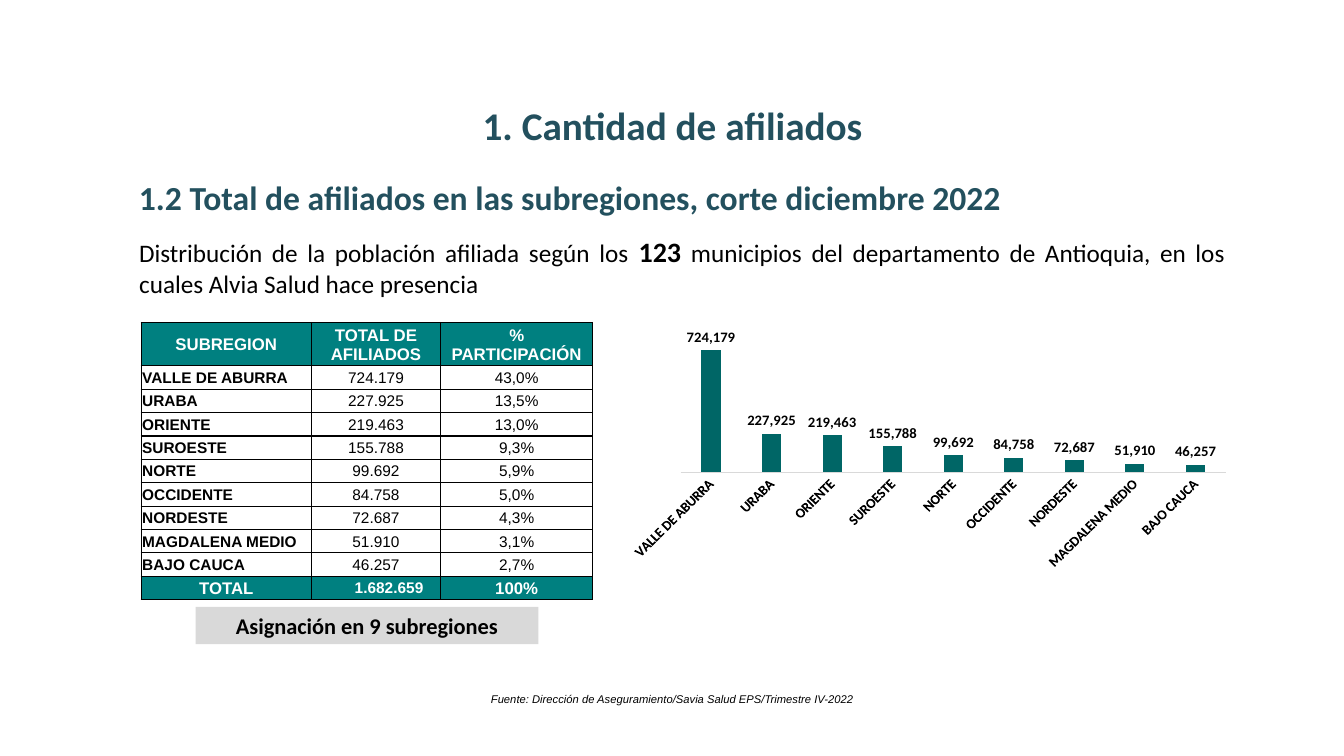
from lxml import etree
from pptx import Presentation
from pptx import util as u
from pptx.chart.data import CategoryChartData
from pptx.dml.color import RGBColor
from pptx.enum import chart as ch, shapes, text
from pptx.oxml.ns import qn

# Content
TITLE = "1. Cantidad de afiliados"
SUBTITLE = "1.2 Total de afiliados en las subregiones, corte diciembre 2022"
INTRO = ("Distribución de la población afiliada según los ", "123",
         " municipios del departamento de Antioquia, en los cuales Alvia Salud hace presencia")
HEADER = ("SUBREGION", "TOTAL DE AFILIADOS", "%\nPARTICIPACIÓN")
SUBREGIONS = [
    ("VALLE DE ABURRA", 724179, "43,0%"),
    ("URABA", 227925, "13,5%"),
    ("ORIENTE", 219463, "13,0%"),
    ("SUROESTE", 155788, "9,3%"),
    ("NORTE", 99692, "5,9%"),
    ("OCCIDENTE", 84758, "5,0%"),
    ("NORDESTE", 72687, "4,3%"),
    ("MAGDALENA MEDIO", 51910, "3,1%"),
    ("BAJO CAUCA", 46257, "2,7%"),
]
TOTAL = ("TOTAL", 1682659, "100%")
BANNER = "Asignación en 9 subregiones"
SOURCE = "Fuente: Dirección de Aseguramiento/Savia Salud EPS/Trimestre IV-2022"


class Theme:
    heading, black, white = "23505E", "000000", "FFFFFF"
    teal, bar, grey = "008080", "006666", "D9D9D9"
    body_font, table_font = "Calibri", "Arial"
    title, subtitle, body, strong, banner = 28, 24, 18, 20, 16
    head, cell, axis, label, source = 12, 11, 10, 10.5, 8


LEFT, CENTER, RIGHT, JUSTIFY = (text.PP_ALIGN.LEFT, text.PP_ALIGN.CENTER,
                                text.PP_ALIGN.RIGHT, text.PP_ALIGN.JUSTIFY)


def rgb(value):
    return RGBColor.from_string(value)


def style(font, size, color=Theme.black, name=Theme.body_font, bold=False, italic=False):
    font.size, font.name, font.bold, font.italic = u.Pt(size), name, bold, italic
    font.color.rgb = rgb(color)


def write(tf, content, align=LEFT, **fmt):
    """Fill a text frame, one paragraph per line of content."""
    tf.word_wrap = True
    for i, line in enumerate(content.split("\n")):
        p = tf.paragraphs[0] if i == 0 else tf.add_paragraph()
        p.alignment = align
        r = p.add_run()
        r.text = line
        style(r.font, **fmt)


def place(sp, left, top, width, height):
    sp.left, sp.top, sp.width, sp.height = map(u.Inches, (left, top, width, height))


def fill_cell(cell, content, fill=None, margin_right=0.01, **fmt):
    cell.margin_left = cell.margin_top = u.Inches(0.01)
    cell.margin_right, cell.margin_bottom = u.Inches(margin_right), 0
    cell.vertical_anchor = text.MSO_ANCHOR.MIDDLE
    write(cell.text_frame, content, name=Theme.table_font, **fmt)
    tc_pr = cell._tc.get_or_add_tcPr()
    for side in ("a:lnL", "a:lnR", "a:lnT", "a:lnB"):
        ln = etree.SubElement(tc_pr, qn(side), w=str(u.Pt(1)))
        solid = etree.SubElement(ln, qn("a:solidFill"))
        etree.SubElement(solid, qn("a:srgbClr"), val=Theme.black)
    if fill:
        cell.fill.solid()
        cell.fill.fore_color.rgb = rgb(fill)
    else:
        cell.fill.background()


def add_table(s):
    rows = [HEADER, *SUBREGIONS, TOTAL]
    widths, height, head_height = (1.69, 1.28, 1.51), 2.75, 0.43
    frame = s.shapes.add_table(len(rows), len(widths), u.Inches(1.4), u.Inches(3.2),
                               u.Inches(sum(widths)), u.Inches(height))
    table = frame.table
    table.horz_banding = False
    for col, width in zip(table.columns, widths):
        col.width = u.Inches(width)
    last = len(rows) - 1
    for i, row in enumerate(rows):
        table.rows[i].height = u.Inches(head_height if i == 0 else (height - head_height) / last)
        for j, value in enumerate(row):
            content = f"{value:,}".replace(",", ".") if isinstance(value, int) else value
            fmt = dict(align=CENTER, size=Theme.cell)
            if i in (0, last):
                fmt.update(size=Theme.head, color=Theme.white, bold=True, fill=Theme.teal)
                if isinstance(value, int):
                    fmt.update(align=RIGHT, margin_right=0.17, size=Theme.cell)
            elif j == 0:
                fmt.update(align=LEFT, bold=True)
            fill_cell(table.cell(i, j), content, **fmt)


def add_chart(s):
    data = CategoryChartData(number_format="#,##0")
    data.categories = [name for name, _, _ in SUBREGIONS]
    data.add_series("Afiliados", [count for _, count, _ in SUBREGIONS])
    chart = s.shapes.add_chart(ch.XL_CHART_TYPE.COLUMN_CLUSTERED, u.Inches(6.14), u.Inches(3.26),
                               u.Inches(6.14), u.Inches(2.44), data).chart
    chart.has_legend = chart.has_title = False
    style(chart.font, Theme.axis)

    # Axes
    val, cat = chart.value_axis, chart.category_axis
    val.visible = val.has_major_gridlines = False
    val.minimum_scale, val.maximum_scale = 0, 800000
    cat.major_tick_mark = ch.XL_TICK_MARK.NONE
    cat.format.line.color.rgb, cat.format.line.width = rgb(Theme.grey), u.Pt(0.75)
    style(cat.tick_labels.font, Theme.axis, bold=True)
    cat._element.find(qn("c:txPr")).find(qn("a:bodyPr")).set("rot", "-2700000")

    # Columns and their labels
    plot = chart.plots[0]
    plot.vary_by_categories, plot.gap_width, plot.overlap = False, 219, -27
    bars = plot.series[0]
    bars.format.fill.solid()
    bars.format.fill.fore_color.rgb = rgb(Theme.bar)
    labels = bars.data_labels
    labels.show_value, labels.position = True, ch.XL_LABEL_POSITION.OUTSIDE_END
    labels.number_format, labels.number_format_is_linked = "#,##0", False
    style(labels.font, Theme.label, bold=True)


def main():
    prs = Presentation()
    prs.slide_width, prs.slide_height = u.Inches(13.33), u.Inches(7.5)
    s = prs.slides.add_slide(prs.slide_layouts[1])

    # Title and subtitle
    title, body = s.placeholders
    place(title, 2.66, 0.95, 8.02, 0.57)
    write(title.text_frame, TITLE, CENTER, size=Theme.title, color=Theme.heading, bold=True)
    sp = s.shapes.add_textbox(0, 0, 0, 0)
    place(sp, 1.28, 1.71, 9.71, 0.5)
    write(sp.text_frame, SUBTITLE, size=Theme.subtitle, color=Theme.heading, bold=True)

    # Introduction
    place(body, 1.28, 2.28, 10.97, 0.74)
    p = body.text_frame.paragraphs[0]
    p_pr = p._p.get_or_add_pPr()
    p_pr.set("marL", "0")
    p_pr.set("indent", "0")
    etree.SubElement(p_pr, qn("a:buNone"))
    p.alignment, p.space_before = JUSTIFY, u.Pt(0)
    for part in INTRO:
        r = p.add_run()
        r.text = part
        strong = part.isdigit()
        style(r.font, Theme.strong if strong else Theme.body, bold=strong)

    add_table(s)
    add_chart(s)

    # Banner under the table
    sp = s.shapes.add_shape(shapes.MSO_SHAPE.RECTANGLE, 0, 0, 0, 0)
    place(sp, 1.94, 6.02, 3.4, 0.37)
    sp.shadow.inherit = False
    sp.fill.solid()
    sp.fill.fore_color.rgb = rgb(Theme.grey)
    sp.line.fill.background()
    write(sp.text_frame, BANNER, CENTER, size=Theme.banner, bold=True)

    # Source line
    sp = s.shapes.add_textbox(0, 0, 0, 0)
    place(sp, 3.42, 6.82, 6.5, 0.24)
    write(sp.text_frame, SOURCE, CENTER, size=Theme.source, name=Theme.table_font, italic=True)

    prs.save("out.pptx")


if __name__ == "__main__":
    main()
